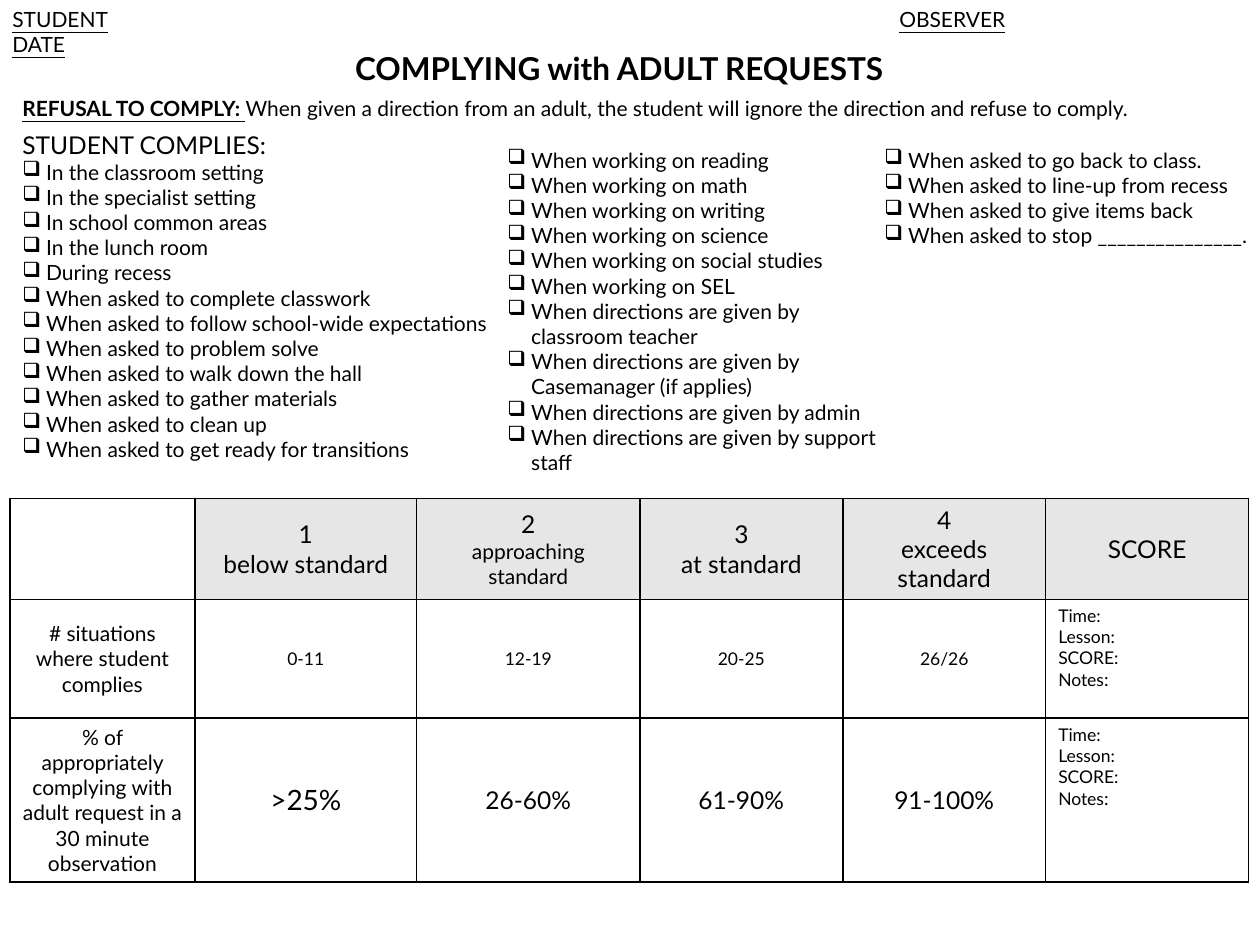
"""Build a one-slide observation rubric for complying with adult requests."""
from lxml import etree
from pptx import Presentation
from pptx import util as u
from pptx.dml.color import RGBColor
from pptx.enum import text
from pptx.oxml.ns import qn

FONT = "Lato"
COLOURS = {"ink": "000000", "header": "E7E6E6"}
CENTRE = text.PP_ALIGN.CENTER
COLUMN_WIDTHS = [3.73, 4.47, 4.5, 4.09, 4.09, 4.09]
ROW_HEIGHTS = [2.03, 2.39, 3.31]

PLACES = [
    "In the classroom setting",
    "In the specialist setting",
    "In school common areas",
    "In the lunch room",
    "During recess",
    "When asked to complete classwork",
    "When asked to follow school-wide expectations",
    "When asked to problem solve",
    "When asked to walk down the hall",
    "When asked to gather materials",
    "When asked to clean up",
    "When asked to get ready for transitions",
]
SUBJECTS = [f"When working on {subject}" for subject in
            ("reading", "math", "writing", "science", "social studies", "SEL")]
ADULTS = [f"When directions are given by {adult}" for adult in
          ("classroom teacher", "Casemanager (if applies)", "admin", "support staff")]
REQUESTS = [f"When asked to {request}" for request in
            ("go back to class.", "line-up from recess", "give items back",
             "stop _______________.")]

NOTES = [[("Time:", 10)], [("Lesson:", 10)], [("SCORE:", 10)],
         [("Notes", 10), (":", 10.5)]]
RUBRIC = [
    [
        [],
        [[("1", 14)], [("below standard", 14)]],
        [[("2", 14)], [("approaching standard", 12)]],
        [[("3", 14)], [("at standard", 14)]],
        [[("4", 14)], [("exceeds standard", 14)]],
        [[("SCORE", 14)]],
    ],
    [
        [[("# situations where student complies", 12)]],
        *[[[(count, 10)]] for count in ("0-11", "12-19", "20-25", "26/26")],
        NOTES,
    ],
    [
        [[("% of appropriately complying with adult request in a 30 minute observation", 12)]],
        [[(">25%", 16)]],
        *[[[(share, 14)]] for share in ("26-60%", "61-90%", "91-100%")],
        NOTES,
    ],
]


def add_run(paragraph, words, size, bold=False, underline=False):
    """Append one formatted run to a paragraph."""
    run = paragraph.add_run()
    run.text = words
    font = run.font
    font.name, font.size = FONT, u.Pt(size)
    font.bold, font.underline = bold, underline
    font.color.rgb = RGBColor.from_string(COLOURS["ink"])


def fill_text(frame, lines, align=None):
    """Write each line, a list of run arguments, as its own paragraph."""
    for index, line in enumerate(lines):
        paragraph = frame.add_paragraph() if index else frame.paragraphs[0]
        paragraph.alignment = align
        for run in line:
            add_run(paragraph, *run)


def add_text(slide, left, top, width, height, lines, align=None):
    """Add a wrapping text box and return its text frame."""
    shape = slide.shapes.add_textbox(u.Cm(left), u.Cm(top), u.Cm(width), u.Cm(height))
    frame = shape.text_frame
    frame.word_wrap = True
    frame.auto_size = text.MSO_AUTO_SIZE.SHAPE_TO_FIT_TEXT
    fill_text(frame, lines, align)
    return frame


def set_tab(paragraph, position):
    """Give a paragraph one left tab stop."""
    tabs = etree.SubElement(paragraph._p.get_or_add_pPr(), qn("a:tabLst"))
    etree.SubElement(tabs, qn("a:tab"), pos=str(u.Cm(position)), algn="l")


def add_checklist(slide, left, top, width, height, items, heading=None):
    """Add a list with box bullets under an optional heading."""
    lines = [[(heading, 14)]] if heading else []
    lines += [[(item, 12)] for item in items]
    frame = add_text(slide, left, top, width, height, lines)
    indent = u.Cm(0.48)
    for paragraph in frame.paragraphs[1 if heading else 0:]:
        properties = paragraph._p.get_or_add_pPr()
        properties.set("marL", str(indent))
        properties.set("indent", str(-indent))
        etree.SubElement(properties, qn("a:buChar"), char="❑")


def set_borders(cell):
    """Draw a one-point line on every side of a cell."""
    properties = cell._tc.get_or_add_tcPr()
    for side in ("lnL", "lnR", "lnT", "lnB"):
        line = etree.SubElement(properties, qn(f"a:{side}"), w=str(u.Pt(1)))
        fill = etree.SubElement(line, qn("a:solidFill"))
        etree.SubElement(fill, qn("a:srgbClr"), val=COLOURS["ink"])


def add_rubric(slide, left, top):
    """Add the scoring table."""
    frame = slide.shapes.add_table(
        len(ROW_HEIGHTS), len(COLUMN_WIDTHS), u.Cm(left), u.Cm(top),
        u.Cm(sum(COLUMN_WIDTHS)), u.Cm(sum(ROW_HEIGHTS)))
    table = frame.table
    table.first_row = table.horz_banding = False
    for column, width in zip(table.columns, COLUMN_WIDTHS):
        column.width = u.Cm(width)
    for row_index, (row, height) in enumerate(zip(table.rows, ROW_HEIGHTS)):
        row.height = u.Cm(height)
        for column_index, lines in enumerate(RUBRIC[row_index]):
            cell = table.cell(row_index, column_index)
            set_borders(cell)
            if row_index == 0 and column_index > 0:
                cell.fill.solid()
                cell.fill.fore_color.rgb = RGBColor.from_string(COLOURS["header"])
            else:
                cell.fill.background()
            is_notes = lines is NOTES
            cell.vertical_anchor = (text.MSO_ANCHOR.TOP if is_notes
                                    else text.MSO_ANCHOR.MIDDLE)
            fill_text(cell.text_frame, lines, None if is_notes else CENTRE)


def main():
    """Build and save the presentation."""
    presentation = Presentation()
    presentation.slide_width, presentation.slide_height = u.Cm(25.4), u.Cm(19.05)
    slide = presentation.slides.add_slide(presentation.slide_layouts[6])
    add_text(slide, 0, 0.86, 24.97, 1.02,
             [[("COMPLYING with ADULT REQUESTS", 18, True)]], CENTRE)
    add_rubric(slide, 0.2, 10.05)
    add_text(slide, 0.2, 1.8, 24.97, 0.76, [[
        ("REFUSAL TO COMPLY: ", 12, True, True),
        ("When given a direction from an adult, the student will ignore "
         "the direction and refuse to comply.", 12)]])
    details = add_text(slide, 0, 0, 25.4, 1.27, [
        [("STUDENT", 12, False, True), ("\t", 12), ("OBSERVER", 12, False, True)],
        [("DATE", 12, False, True)]])
    set_tab(details.paragraphs[0], 17.88)
    add_checklist(slide, 0.2, 2.49, 10, 8.13, PLACES, "STUDENT COMPLIES:")
    add_checklist(slide, 9.98, 2.84, 7.95, 8.03, SUBJECTS + ADULTS)
    add_checklist(slide, 17.58, 2.84, 7.95, 3.43, REQUESTS)
    presentation.save("out.pptx")


if __name__ == "__main__":
    main()
